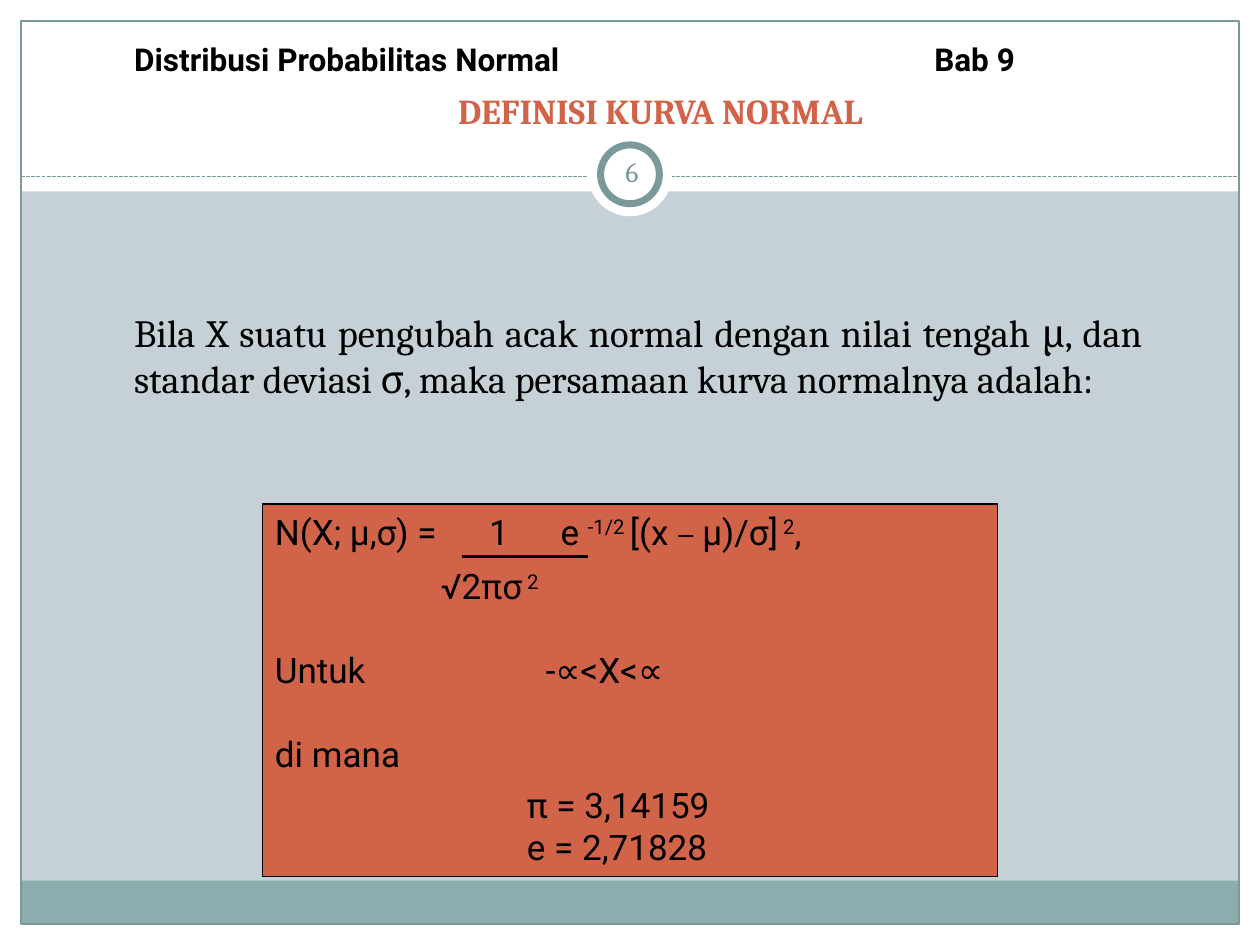
from lxml.etree import SubElement
from pptx import Presentation
from pptx.dml.color import RGBColor
from pptx.enum.dml import MSO_LINE
from pptx.enum.shapes import MSO_CONNECTOR, MSO_SHAPE as Shape
from pptx.enum.text import MSO_ANCHOR as Anchor, PP_ALIGN as Align
from pptx.oxml.ns import qn
from pptx.util import Inches, Pt

SERIF, SANS = "Cambria", "Roboto"
BLACK, WHITE = "000000", "FFFFFF"
ACCENT, TEAL, PALE_TEAL, BACKDROP = "D16349", "7C999A", "8CADAE", "C5D1D7"
COLUMNS, ROWS = 60, 45


def color(hex_code):
    return RGBColor.from_string(hex_code)


def unit(count):
    """Length of a number of grid cells, each a sixth of an inch."""
    return Inches(count / 6)


class Page:
    """Style and current slide; places are grid columns and rows."""

    def __init__(self, deck, title_layout):
        self.slide = deck.slides.add_slide(title_layout)
        self.shapes = self.slide.shapes
        backdrop = self.slide.background.fill
        backdrop.solid()
        backdrop.fore_color.rgb = color(BACKDROP)

    def place(self, item, box):
        item.left, item.top, item.width, item.height = map(unit, box)

    def block(self, box, fill=None, line=None, weight=0.75, kind=Shape.RECTANGLE):
        block = self.shapes.add_shape(kind, *map(unit, box))
        block.shadow.inherit = False
        if fill:
            block.fill.solid()
            block.fill.fore_color.rgb = color(fill)
        else:
            block.fill.background()
        if line:
            block.line.color.rgb = color(line)
            block.line.width = Pt(weight)
        else:
            block.line.fill.background()
        return block

    def rule(self, left, right, row, line, weight, dash=None):
        rule = self.shapes.add_connector(
            MSO_CONNECTOR.STRAIGHT, unit(left), unit(row), unit(right), unit(row))
        rule.line.color.rgb = color(line)
        rule.line.width = Pt(weight)
        if dash:
            rule.line.dash_style = dash
        SubElement(rule._element.spPr, qn("a:effectLst"))

    def title(self, box, text):
        title = self.shapes.title
        self.place(title, box)
        self.shapes._spTree.append(title._element)  # bring in front of the bands
        title.text_frame.vertical_anchor = Anchor.BOTTOM
        self.paragraph(title.text_frame.paragraphs[0], [text], 20, SERIF,
                       ACCENT, bold=True, align=Align.CENTER)

    def text(self, box, parts, size, font, **style):
        frame = self.shapes.add_textbox(*map(unit, box)).text_frame
        frame.word_wrap = True
        self.paragraph(frame.paragraphs[0], parts, size, font, **style)
        return frame

    def paragraph(self, paragraph, parts, size, font, ink=BLACK, bold=False,
                  align=Align.LEFT, stops=(), before=0, spacing=1.0):
        """Parts are strings, or (string, "super" or a font name) pairs."""
        if stops:
            tabs = SubElement(paragraph._p.get_or_add_pPr(), qn("a:tabLst"))
            for stop in stops:
                SubElement(tabs, qn("a:tab"), pos=str(unit(stop)), algn="l")
        paragraph.alignment = align
        paragraph.space_before = Pt(before)
        paragraph.line_spacing = spacing
        paragraph.font.size = Pt(size)
        paragraph.font.name = font
        paragraph.font.bold = bold
        paragraph.font.color.rgb = color(ink)
        for part in parts:
            words, variant = part if isinstance(part, tuple) else (part, None)
            run = paragraph.add_run()
            run.text = words
            if variant == "super":
                run._r.get_or_add_rPr().set("baseline", "30000")
            elif variant:
                run.font.name = variant


def draw_frame(page):
    edge = 1
    for band in ((0, ROWS - edge, COLUMNS, edge), (0, 0, COLUMNS, 9.12),
                 (0, 0, edge, ROWS), (COLUMNS - edge, 0, edge, ROWS)):
        page.block(band, WHITE)
    inner_width = COLUMNS - 2 * edge
    page.block((edge, 41.94, inner_width, 2.06), PALE_TEAL)
    page.block((edge, edge, inner_width, ROWS - 2 * edge), line=TEAL)
    page.rule(edge, COLUMNS - edge, 8.4, TEAL, 0.75, MSO_LINE.SQUARE_DOT)
    page.block((28, 6.3, 4, 4), WHITE, kind=Shape.OVAL)
    page.block((28.6, 6.9, 2.8, 2.8), WHITE, TEAL, 4, Shape.OVAL)


def draw_formula(page):
    panel = page.block((12.5, 24, 35, 17.75), ACCENT, BLACK)
    frame = panel.text_frame
    frame.vertical_anchor = Anchor.TOP
    lines = [
        (["N(X; μ,σ) =\t1\te ", ("-1/2 ", "super"), "[(x ", ("– ", SERIF),
          "μ)/σ]", (" 2", "super"), ","], dict(stops=(10.2, 13.6))),
        (["\t√2πσ", (" 2", "super")], dict(stops=(7.9,), spacing=1.3)),
        (["Untuk\t-∝<X<∝"], dict(stops=(12.9,), before=24)),
        (["di mana"], dict(before=24)),
        (["\tπ = 3,14159"], dict(stops=(12,), before=5)),
        (["\te = 2,71828"], dict(stops=(12,))),
    ]
    for index, (parts, style) in enumerate(lines):
        paragraph = frame.add_paragraph() if index else frame.paragraphs[0]
        page.paragraph(paragraph, parts, 20, SANS, **style)
    page.rule(22, 28, 26.5, BLACK, 2.25)


def main():
    deck = Presentation()
    deck.slide_width, deck.slide_height = unit(COLUMNS), unit(ROWS)
    page = Page(deck, deck.slide_layouts[5])

    draw_frame(page)
    number = page.text((28.6, 6.7, 3, 2.9), ["6"], 16, SERIF, ink=TEAL,
                       align=Align.CENTER)
    number.vertical_anchor = Anchor.MIDDLE
    number.margin_left = number.margin_right = Inches(0.05)

    page.title((5.9, 3, 51.1, 3.55), "DEFINISI KURVA NORMAL")
    page.text((5.8, 14.4, 49.2, 6),
              ["Bila X suatu pengubah acak normal dengan nilai tengah μ, dan "
               "standar deviasi σ, maka persamaan kurva normalnya adalah:"],
              22, SERIF, align=Align.JUSTIFY)
    draw_formula(page)
    page.text((5.8, 1.6, 50.2, 2.5), ["Distribusi Probabilitas Normal\tBab 9"],
              18, SANS, bold=True, stops=(38.1,))
    deck.save("out.pptx")


if __name__ == "__main__":
    main()
